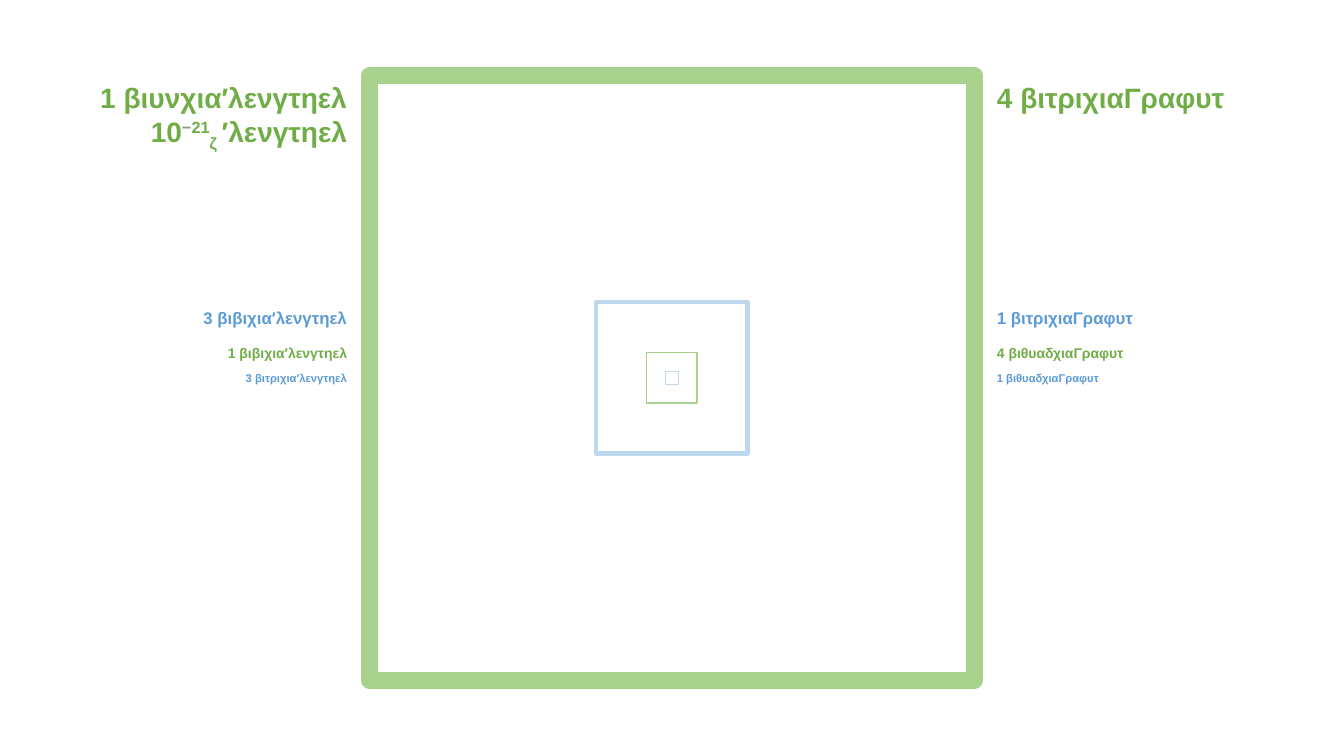
from pptx import Presentation
from pptx.dml.color import RGBColor
from pptx.enum.shapes import MSO_SHAPE
from pptx.enum.text import MSO_AUTO_SIZE, PP_ALIGN
from pptx.util import Pt

RECTANGLE = MSO_SHAPE.RECTANGLE
GROW = MSO_AUTO_SIZE.SHAPE_TO_FIT_TEXT
LEFT, RIGHT = PP_ALIGN.LEFT, PP_ALIGN.RIGHT

SLIDE_WIDTH, SLIDE_HEIGHT = 960, 540
LABEL_GAP = 9
BLANK_LAYOUT = 6
GREEN, BLUE = "70AD47", "5B9BD5"
PALE_GREEN, PALE_BLUE = "A9D18E", "BDD7EE"
MINUS_GREEN = "89A27A"

SQUARES = [
    (432, PALE_GREEN, 12),
    (108, PALE_BLUE, 3),
    (36, PALE_GREEN, 1),
    (9, PALE_BLUE, 0.25),
]
POWER_SPANS = [
    ("−", MINUS_GREEN, 30),
    ("21", GREEN, 30),
    ("ζ ", GREEN, -25),
    ("′λενγτηελ", GREEN, 0),
]
LENGTHS = [
    (0, 240, 55.4, "1 βιυνχια′λενγτηελ\v10", 20, GREEN, POWER_SPANS),
    (162, 141, 21.6, "3 βιβιχια′λενγτηελ", 12, BLUE, []),
    (188.6, 141, 19.4, "1 βιβιχια′λενγτηελ", 10, GREEN, []),
    (207.4, 141, 17.3, "3 βιτριχια′λενγτηελ", 8, BLUE, []),
]
AREAS = [
    (0, 240, 31.7, "4 βιτριχιαΓραφυτ", 20, GREEN, []),
    (162, 141, 21.6, "1 βιτριχιαΓραφυτ", 12, BLUE, []),
    (188.6, 141, 19.4, "4 βιθυαδχιαΓραφυτ", 10, GREEN, []),
    (207.4, 141, 17.3, "1 βιθυαδχιαΓραφυτ", 8, BLUE, []),
]


def color(value):
    return RGBColor.from_string(value)


def style_span(span, size, value, baseline=0):
    span.font.name = "Arial"
    span.font.size = Pt(size)
    span.font.bold = True
    span.font.color.rgb = color(value)
    if baseline:
        span.font._element.set("baseline", str(baseline * 1000))


def add_squares(slide, center_x, center_y):
    for side, value, weight in SQUARES:
        square = slide.shapes.add_shape(
            RECTANGLE, Pt(center_x - side / 2), Pt(center_y - side / 2), Pt(side), Pt(side)
        )
        square.shadow.inherit = False
        square.fill.background()
        square.line.color.rgb = color(value)
        square.line.width = Pt(weight)


def add_labels(slide, edge, top, labels, alignment):
    for offset, width, height, text, size, value, extra_spans in labels:
        left = edge - width if alignment == RIGHT else edge
        box = slide.shapes.add_textbox(Pt(left), Pt(top + offset), Pt(width), Pt(height))
        frame = box.text_frame
        frame.word_wrap = True
        frame.auto_size = GROW
        para = frame.paragraphs[0]
        para.text = text
        para.alignment = alignment
        for span in para.runs:
            style_span(span, size, value)
        for span_text, span_value, baseline in extra_spans:
            span = para.add_run()
            span.text = span_text
            style_span(span, size, span_value, baseline)


def main():
    deck = Presentation()
    deck.slide_width, deck.slide_height = Pt(SLIDE_WIDTH), Pt(SLIDE_HEIGHT)
    slide = deck.slides.add_slide(deck.slide_layouts[BLANK_LAYOUT])
    center_x, center_y = SLIDE_WIDTH / 2, SLIDE_HEIGHT / 2
    half = SQUARES[0][0] / 2
    add_squares(slide, center_x, center_y)
    add_labels(slide, center_x - half - LABEL_GAP, center_y - half, LENGTHS, RIGHT)
    add_labels(slide, center_x + half + LABEL_GAP, center_y - half, AREAS, LEFT)
    deck.save("out.pptx")


if __name__ == "__main__":
    main()
